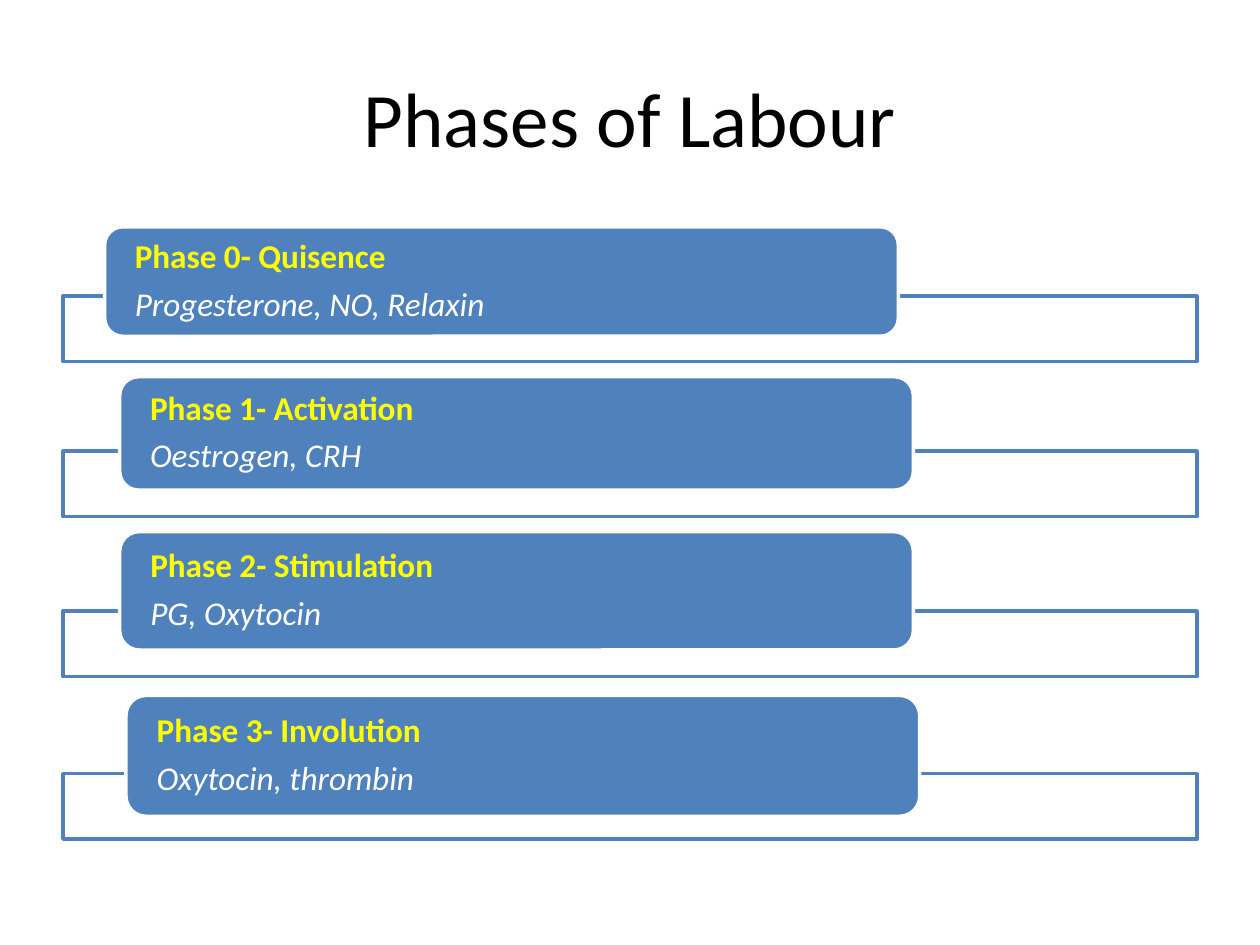
from dataclasses import dataclass

from lxml import etree
from pptx import Presentation
from pptx import util as u
from pptx.dml.color import RGBColor
from pptx.enum import shapes, text
from pptx.oxml.ns import qn


@dataclass(frozen=True)
class Theme:
    """Colours, font and type sizes of the deck."""
    font: str = "Calibri"
    title_size: float = 44
    phase_size: float = 19
    black: RGBColor = RGBColor(0, 0, 0)
    white: RGBColor = RGBColor(255, 255, 255)
    blue: RGBColor = RGBColor(0x4F, 0x81, 0xBD)
    yellow: RGBColor = RGBColor(255, 255, 0)


@dataclass(frozen=True)
class Phase:
    """One phase of labour with the places of its bar and box in points."""
    name: str
    hormones: str
    bar_top: float
    left: float
    top: float
    height: float


THEME = Theme()
PHASES = [
    Phase("Phase 0- Quisence", "Progesterone, NO, Relaxin", 169.2, 59.8, 129.6, 62.6),
    Phase("Phase 1- Activation", "Oestrogen, CRH", 257.8, 68.4, 215.3, 64.8),
    Phase("Phase 2- Stimulation", "PG, Oxytocin", 349.2, 68.4, 303.8, 67.7),
    Phase("Phase 3- Involution", "Oxytocin, thrombin", 442.1, 72, 397.4, 69.1),
]


def add_span(para, words, size, color, bold=False, italic=False):
    """Add one formatted run to a paragraph."""
    span = para.add_run()
    span.text = words
    font = span.font
    font.name, font.size, font.color.rgb = THEME.font, u.Pt(size), color
    font.bold, font.italic = bold, italic


def add_title(page, words):
    """Place and fill the title placeholder."""
    title = page.shapes.title
    title.left, title.top = u.Pt(36), u.Pt(21.6)
    title.width, title.height = u.Pt(648), u.Pt(90)
    title.text_frame.vertical_anchor = text.MSO_ANCHOR.MIDDLE
    para = title.text_frame.paragraphs[0]
    para.alignment = text.PP_ALIGN.CENTER
    add_span(para, words, THEME.title_size, THEME.black)


def add_panel(page, kind, left, top, width, height, fill, line):
    """Add a flat filled shape with a two-point outline."""
    panel = page.shapes.add_shape(
        kind, u.Pt(left), u.Pt(top), u.Pt(width), u.Pt(height))
    panel.shadow.inherit = False
    panel.fill.solid()
    panel.fill.fore_color.rgb = fill
    panel.line.color.rgb = line
    panel.line.width = u.Pt(2)
    return panel


def add_bar(page, top):
    """Add the wide, slightly transparent bar behind a phase box."""
    bar = add_panel(page, shapes.MSO_SHAPE.RECTANGLE, 36, top, 648, 37.4,
                    THEME.white, THEME.blue)
    color = bar.fill._xPr.find(qn("a:solidFill"))[0]
    etree.SubElement(color, qn("a:alpha"), val="90000")


def add_phase_box(page, phase):
    """Add the rounded box with the phase name and its hormones."""
    box = add_panel(page, shapes.MSO_SHAPE.ROUNDED_RECTANGLE, phase.left,
                    phase.top, 453.6, phase.height, THEME.blue, THEME.white)
    frame = box.text_frame
    frame.word_wrap = True
    frame.vertical_anchor = text.MSO_ANCHOR.MIDDLE
    frame.margin_left = frame.margin_right = u.Pt(14.2)
    frame.margin_top = frame.margin_bottom = 0
    name, hormones = frame.paragraphs[0], frame.add_paragraph()
    for para in (name, hormones):
        para.alignment = text.PP_ALIGN.LEFT
        para.line_spacing = 0.9
        para.space_after = u.Pt(0.35 * THEME.phase_size)
    add_span(name, phase.name, THEME.phase_size, THEME.yellow, bold=True)
    add_span(hormones, phase.hormones, THEME.phase_size, THEME.white, italic=True)


def main():
    """Build the slide and save the deck."""
    deck = Presentation()
    deck.slide_width, deck.slide_height = u.Pt(720), u.Pt(540)
    page = deck.slides.add_slide(deck.slide_layouts.get_by_name("Title Only"))
    add_title(page, "Phases of Labour")
    for phase in PHASES:
        add_bar(page, phase.bar_top)
        add_phase_box(page, phase)
    deck.save("out.pptx")


if __name__ == "__main__":
    main()
